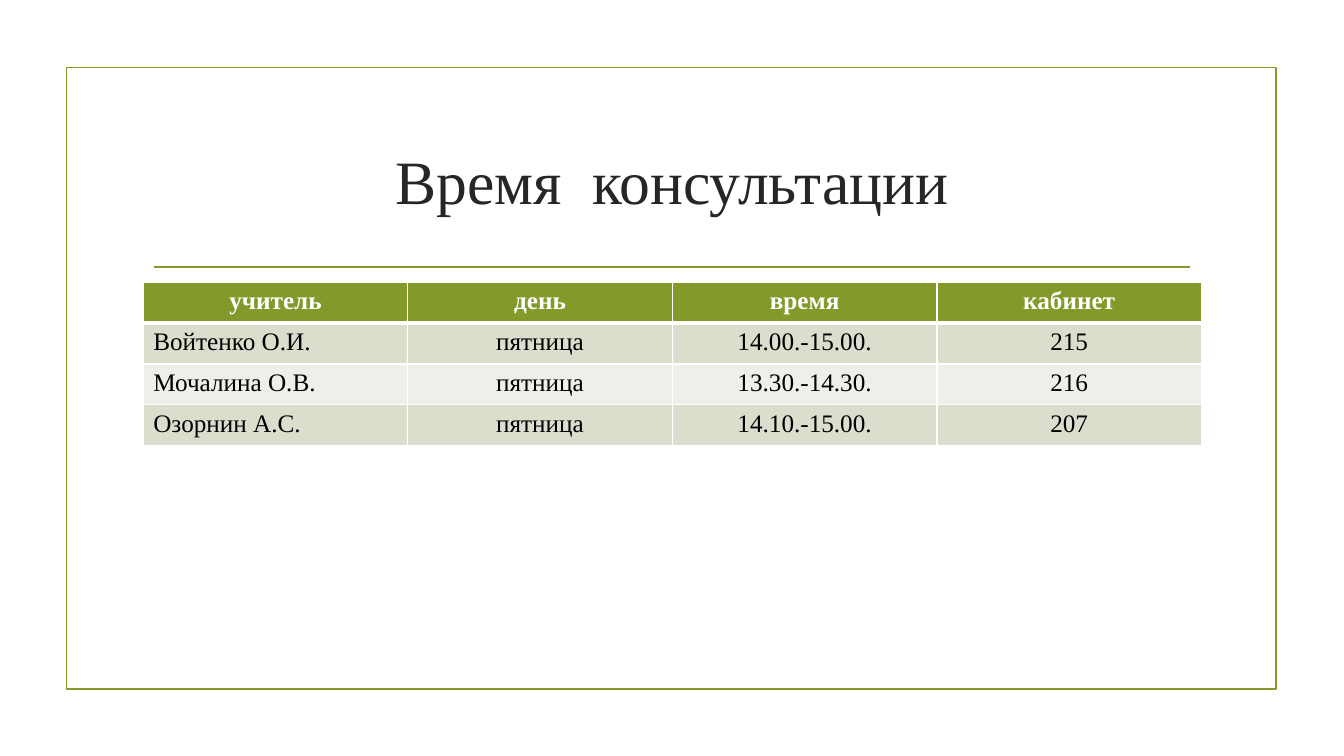
from lxml import etree
from pptx import Presentation
from pptx import util as u
from pptx.dml.color import RGBColor
from pptx.enum import shapes, text
from pptx.oxml.ns import qn

FONT = "Times New Roman"
GREEN, WHITE, BLACK, TITLE_GREY = "83992A", "FFFFFF", "000000", "262626"
BANDS = ["D9DECD", "EDEFE8"]
SCHEDULE = [
    ["учитель", "день", "время", "кабинет"],
    ["Войтенко О.И.", "пятница", "14.00.-15.00.", "215"],
    ["Мочалина О.В.", "пятница", "13.30.-14.30.", "216"],
    ["Озорнин А.С.", "пятница", "14.10.-15.00.", "207"],
]


def color(value):
    """Turn a hex string into a colour."""
    return RGBColor.from_string(value)


def style_text(para, size, fill, bold, align):
    """Set the font and alignment of a paragraph."""
    para.alignment = align
    para.font.name = FONT
    para.font.size = u.Pt(size)
    para.font.bold = bold
    para.font.color.rgb = color(fill)


def set_border(cell, side, width):
    """Draw one white edge of a cell."""
    props = cell._tc.get_or_add_tcPr()
    edge = etree.Element(qn(f"a:ln{side}"), w=str(u.Pt(width)))
    fill = etree.SubElement(edge, qn("a:solidFill"))
    etree.SubElement(fill, qn("a:srgbClr"), val=WHITE)
    props.insert("LRTB".index(side), edge)


def add_frame(page, left, top, width, height):
    """Draw the green outline around the slide content."""
    frame = page.shapes.add_shape(
        shapes.MSO_SHAPE.RECTANGLE, left, top, width, height)
    frame.shadow.inherit = False
    frame.fill.background()
    frame.line.color.rgb = color(GREEN)
    frame.line.width = u.Pt(1.25)


def add_heading(page, left, top, width, height):
    """Place the title in its box and the rule below it."""
    box = page.shapes.add_textbox(left, top, width, height)
    frame = box.text_frame
    frame.word_wrap = True
    frame.vertical_anchor = text.MSO_ANCHOR.MIDDLE
    para = frame.paragraphs[0]
    para.text = "Время  консультации"
    style_text(para, 44, TITLE_GREY, False, text.PP_ALIGN.CENTER)

    inset = u.Cm(0.28)
    rule_top = top + height + u.Cm(0.38)
    rule = page.shapes.add_connector(
        shapes.MSO_CONNECTOR.STRAIGHT,
        left + inset, rule_top, left + width - inset, rule_top)
    rule.line.color.rgb = color(GREEN)
    rule.line.width = u.Pt(1.25)
    etree.SubElement(rule._element.spPr, qn("a:effectLst"))


def add_schedule(page, left, top, width, height):
    """Place the table of consultation hours."""
    table = page.shapes.add_table(
        len(SCHEDULE), len(SCHEDULE[0]), left, top, width, height).table
    for row, values in enumerate(SCHEDULE):
        header = row == 0
        for column, value in enumerate(values):
            cell = table.cell(row, column)
            cell.text = value
            cell.fill.solid()
            cell.fill.fore_color.rgb = color(
                GREEN if header else BANDS[(row - 1) % 2])
            named = column == 0 and not header
            style_text(
                cell.text_frame.paragraphs[0], 18,
                WHITE if header else BLACK, header,
                text.PP_ALIGN.LEFT if named else text.PP_ALIGN.CENTER)
            for side in "LRTB":
                thick = (row, side) in [(0, "B"), (1, "T")]
                set_border(cell, side, 3 if thick else 1)


def main():
    """Build the slide and save the deck."""
    deck = Presentation()
    deck.slide_width, deck.slide_height = u.Cm(33.87), u.Cm(19.05)
    page = deck.slides.add_slide(deck.slide_layouts[6])
    add_frame(page, u.Cm(1.68), u.Cm(1.7), u.Cm(30.48), u.Cm(15.67))
    add_heading(page, u.Cm(3.61), u.Cm(2.72), u.Cm(26.67), u.Cm(3.63))
    add_schedule(page, u.Cm(3.61), u.Cm(7.11), u.Cm(26.67), u.Cm(4.12))
    deck.save("out.pptx")


if __name__ == "__main__":
    main()
